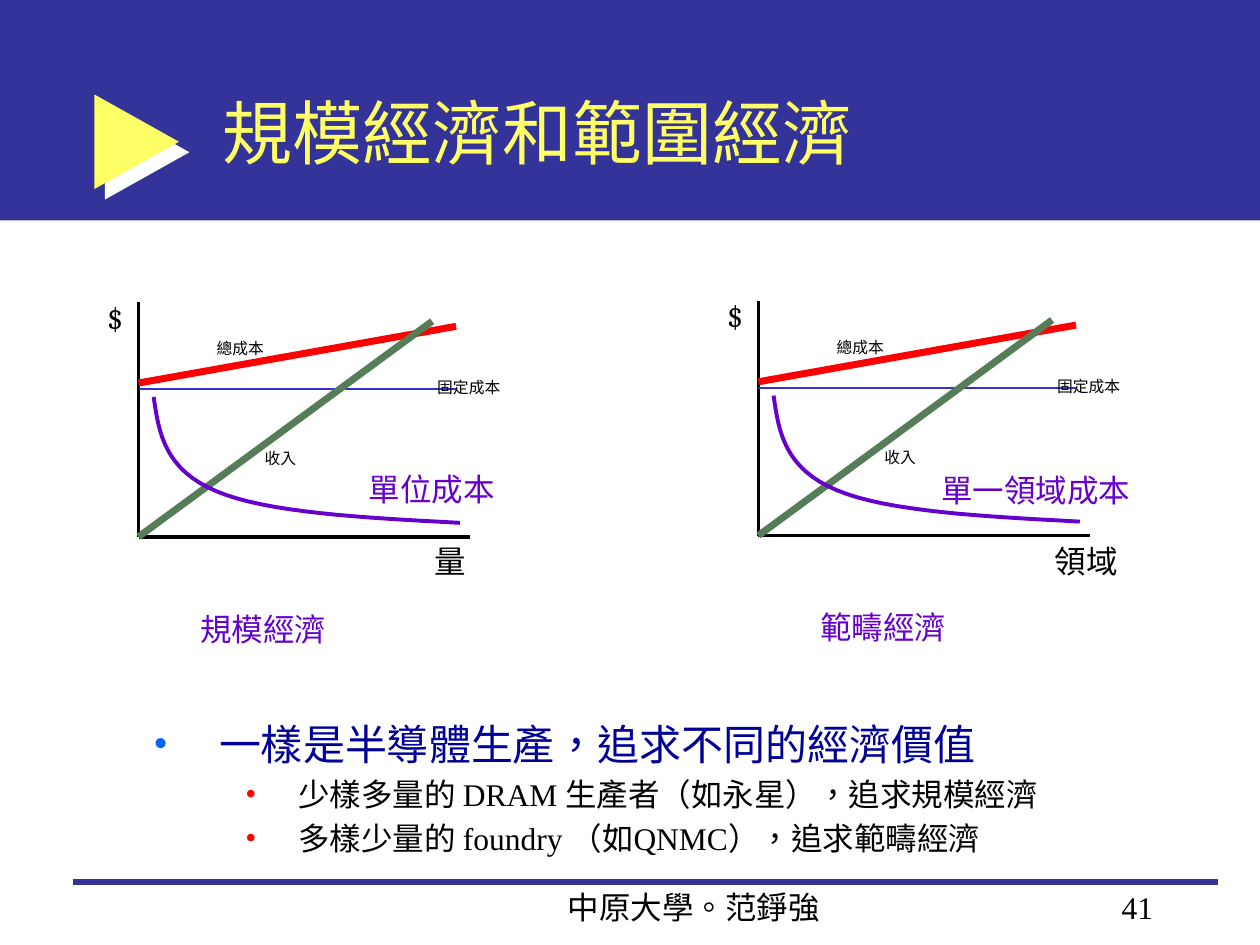
from lxml import etree
from pptx import Presentation
from pptx import util as u
from pptx.dml.color import RGBColor
from pptx.enum import shapes, text
from pptx.oxml import ns

NAVY = RGBColor(0x33, 0x33, 0x99)
YELLOW = RGBColor(0xFF, 0xFF, 0x66)
BLACK = RGBColor(0x00, 0x00, 0x00)
BLUE = RGBColor(0x33, 0x33, 0xCC)
RED = RGBColor(0xFF, 0x00, 0x00)
GREEN = RGBColor(0x57, 0x7D, 0x58)
PURPLE = RGBColor(0x66, 0x00, 0xCC)
DARK_BLUE = RGBColor(0x00, 0x00, 0x99)
BULLET_BLUE = RGBColor(0x00, 0x66, 0xFF)
SERIF = "Times New Roman"

deck = Presentation()
deck.slide_width, deck.slide_height = u.Inches(10), u.Inches(7.5)
page = deck.slides.add_slide(deck.slide_layouts[6])


def add_text(words, place=None, frame=None, size=18, font=SERIF, color=BLACK,
             align=text.PP_ALIGN.LEFT, anchor=text.MSO_ANCHOR.TOP, wrap=True,
             inset=(0.1, 0.05)):
    """Fill a new box at place, or add a paragraph to frame."""
    if frame is None:
        frame = page.shapes.add_textbox(*map(u.Inches, place)).text_frame
        frame.word_wrap = wrap
        frame.vertical_anchor = anchor
        frame.margin_left = frame.margin_right = u.Inches(inset[0])
        frame.margin_top = frame.margin_bottom = u.Inches(inset[1])
        para = frame.paragraphs[0]
    else:
        para = frame.add_paragraph()
    para.alignment = align
    span = para.add_run()
    span.text = words
    span.font.size, span.font.name = u.Pt(size), font
    span.font.color.rgb = color
    span._r.get_or_add_rPr().set("lang", "zh-TW")
    return frame


def add_line(x1, y1, x2, y2, color, weight):
    line = page.shapes.add_connector(
        shapes.MSO_CONNECTOR.STRAIGHT, *map(u.Inches, (x1, y1, x2, y2)))
    line.line.color.rgb, line.line.width = color, u.Pt(weight)
    etree.SubElement(line._element.spPr, ns.qn("a:effectLst"))


# Title band, arrow with a hard white shadow, and footer rule
band = page.shapes.add_shape(shapes.MSO_SHAPE.RECTANGLE, 0, 0, deck.slide_width, u.Inches(1.75))
arrow = page.shapes.add_shape(
    shapes.MSO_SHAPE.RIGHT_ARROW, *map(u.Inches, (0.75, 0.75, 0.67, 0.75)))
arrow.adjustments[0], arrow.adjustments[1] = 0.384, 1
for shape, color in ((band, NAVY), (arrow, YELLOW)):
    shape.shadow.inherit = False
    shape.fill.solid()
    shape.fill.fore_color.rgb = color
    shape.line.fill.background()
effects = arrow._element.spPr.find(ns.qn("a:effectLst"))
shadow = etree.SubElement(effects, ns.qn("a:outerShdw"), dist=str(u.Pt(8.5)),
                          dir="2700000", algn="ctr", rotWithShape="0")
etree.SubElement(shadow, ns.qn("a:srgbClr"), val="FFFFFF")
add_line(0.58, 7, 9.67, 7, NAVY, 3)

# Title and footer
add_text("規模經濟和範圍經濟", (1.67, 0.42, 7.58, 1.25), size=40,
         font="Noto Sans CJK SC", color=YELLOW, anchor=text.MSO_ANCHOR.MIDDLE)
add_text("中原大學。范錚強", (3.92, 7, 3.17, 0.5), align=text.PP_ALIGN.CENTER)
add_text("41", (7.17, 7, 2.08, 0.5), align=text.PP_ALIGN.RIGHT)

# Bulleted points: words, size, colour, bullet colour, left margin, hanging, level
points = [
    ("一樣是半導體生產，追求不同的經濟價值", 24, DARK_BLUE, BULLET_BLUE, 0.52, 0.52, 0),
    ("少樣多量的 DRAM 生產者（如永星），追求規模經濟", 18, BLACK, RED, 1.15, 0.42, 1),
    ("多樣少量的 foundry （如QNMC），追求範疇經濟", 18, BLACK, RED, 1.15, 0.42, 1),
]
body = None
for words, size, color, bullet_color, margin, hanging, level in points:
    body = add_text(words, (1.12, 5.65, 8.47, 1.19), frame=body, size=size, color=color)
    para = body.paragraphs[-1]
    para.level = level
    if level:
        para.space_before = u.Pt(3.6)
    props = para._p.get_or_add_pPr()
    props.set("marL", str(u.Inches(margin)))
    props.set("indent", str(-u.Inches(hanging)))
    tint = etree.SubElement(props, ns.qn("a:buClr"))
    etree.SubElement(tint, ns.qn("a:srgbClr"), val=str(bullet_color))
    etree.SubElement(props, ns.qn("a:buFont"), typeface=SERIF)
    etree.SubElement(props, ns.qn("a:buChar"), char="•")

# Two cost diagrams: origin, axis label and its left, width, name, curve label and its place
diagrams = [
    (1.1, 4.26, "量", 3.38, 0.4, "規模經濟", "單位成本", (2.83, 3.68, 1.21, 0.4)),
    (6.02, 4.25, "領域", 8.3, 0.65, "範疇經濟", "單一領域成本", (7.37, 3.69, 1.72, 0.4)),
]
# Offsets from the origin
lines = [
    (0, -1.86, 0, 0, BLACK, 2),
    (0, 0, 2.63, 0, BLACK, 2),
    (0, -1.17, 2.52, -1.17, BLUE, 1),
    (0, -1.22, 2.52, -1.67, RED, 4),
    (0, 0, 2.33, -1.71, GREEN, 4),
]
labels = [
    ("$", -0.32, -1.93, 0.28, 0.38, 18, "Cambria"),
    ("固定成本", 2.3, -1.3, 0.65, 0.23, 9, "Roboto"),
    ("總成本", 0.55, -1.61, 0.53, 0.23, 9, "Roboto"),
    ("收入", 0.93, -0.74, 0.4, 0.23, 9, "Roboto"),
]
beziers = [
    ((0.12, -1.11), (0.16, -0.82), (0.21, -0.53), (0.62, -0.36)),
    ((0.62, -0.36), (1.02, -0.19), (1.79, -0.15), (2.55, -0.11)),
]
STEPS = 16
for x, y, axis, axis_left, axis_width, name, cost, cost_place in diagrams:
    for x1, y1, x2, y2, color, weight in lines:
        add_line(x + x1, y + y1, x + x2, y + y2, color, weight)
    add_text(axis, (axis_left, 4.26, axis_width, 0.38), font="Roboto", wrap=False,
             inset=(0.07, 0.04))
    for words, left, top, width, height, size, font in labels:
        add_text(words, (x + left, y + top, width, height), size=size, font=font,
                 wrap=False, inset=(0.07, 0.04))
    add_text(name, (x + 0.39, y + 0.53, 1.21, 0.4), color=PURPLE, wrap=False)

    # Falling cost curve, sampled from its Bezier segments
    curve = []
    for a, b, c, d in beziers:
        for step in range(STEPS + 1):
            t = step / STEPS
            weights = ((1 - t) ** 3, 3 * t * (1 - t) ** 2, 3 * t ** 2 * (1 - t), t ** 3)
            dx, dy = (sum(w * p[k] for w, p in zip(weights, (a, b, c, d))) for k in (0, 1))
            curve.append((u.Inches(x + dx), u.Inches(y + dy)))
    builder = page.shapes.build_freeform(*curve[0])
    builder.add_line_segments(curve[1:], close=False)
    outline = builder.convert_to_shape()
    outline.shadow.inherit = False
    outline.fill.background()
    outline.line.color.rgb, outline.line.width = PURPLE, u.Pt(2.25)
    add_text(cost, cost_place, color=PURPLE, wrap=False)

deck.save("out.pptx")
